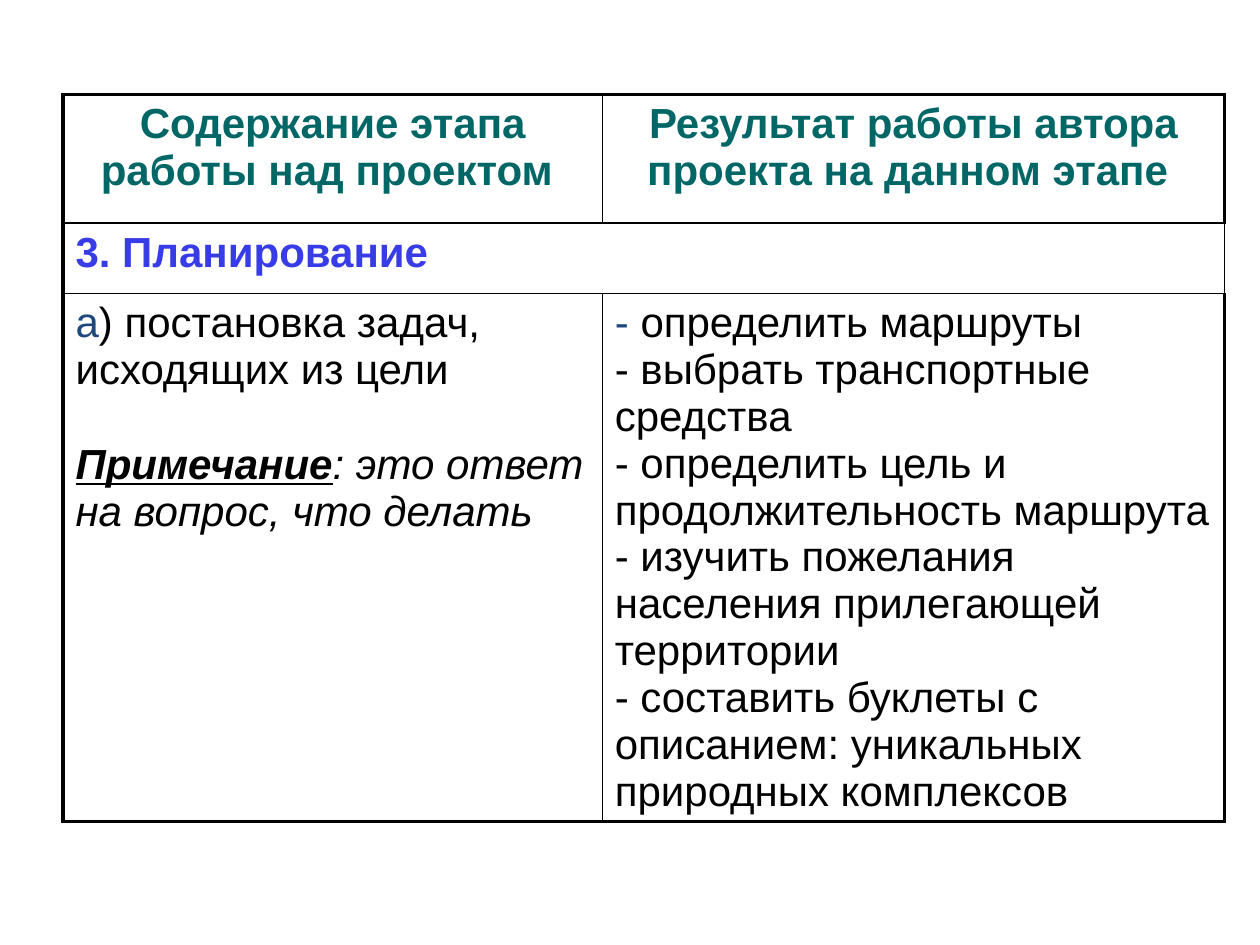
from pptx import Presentation
from pptx import util as u
from pptx.dml.color import RGBColor
from pptx.enum import text
from pptx.oxml.ns import qn
from lxml import etree

WIDTH, HEIGHT = 10, 7.5
BLACK, TEAL, VIOLET, NAVY = "000000", "006666", "383CE6", "1F497D"
THICK, THIN = 2.25, 1


def color(value):
    return RGBColor.from_string(value)


class Page:
    font, size = "Arial", 24

    def __init__(self, deck):
        self.slide = deck.slides.add_slide(deck.slide_layouts[6])

    def table(self, left, top, columns, rows):
        """Add an unstyled table; left and top are shares of the slide."""
        frame = self.slide.shapes.add_table(
            len(rows), len(columns),
            u.Inches(left * WIDTH), u.Inches(top * HEIGHT),
            u.Inches(sum(columns)), u.Inches(sum(rows)))
        grid = frame.table
        grid.first_row = grid.horz_banding = False
        for column, width in zip(grid.columns, columns):
            column.width = u.Inches(width)
        for row, height in zip(grid.rows, rows):
            row.height = u.Inches(height)
        return grid

    def borders(self, grid):
        """Thick outline, thin inner lines, no fill."""
        last_row, last_column = len(grid.rows) - 1, len(grid.columns) - 1
        for r in range(last_row + 1):
            for c in range(last_column + 1):
                cell = grid.cell(r, c)
                edges = {"lnL": c == 0, "lnR": c == last_column,
                         "lnT": r == 0, "lnB": r == last_row}
                properties = cell._tc.get_or_add_tcPr()
                for tag, outer in edges.items():
                    line = etree.SubElement(properties, qn("a:" + tag))
                    line.set("w", str(u.Pt(THICK if outer else THIN)))
                    fill = etree.SubElement(line, qn("a:solidFill"))
                    etree.SubElement(fill, qn("a:srgbClr")).set("val", BLACK)
                cell.fill.background()

    def fill_cell(self, cell, paragraphs, align=text.PP_ALIGN.LEFT, gap=0):
        """Each paragraph is a list of (words, colour, styles) spans."""
        frame = cell.text_frame
        for index, spans in enumerate(paragraphs):
            para = frame.add_paragraph() if index else frame.paragraphs[0]
            para.alignment = align
            para.space_before = u.Pt(gap if index else 0)
            for words, tint, styles in spans:
                span = para.add_run()
                span.text = words
                span.font.name, span.font.size = self.font, u.Pt(self.size)
                span.font.color.rgb = color(tint)
                span.font.bold = "b" in styles
                span.font.italic = "i" in styles
                span.font.underline = "u" in styles


def main():
    deck = Presentation()
    deck.slide_width, deck.slide_height = u.Inches(WIDTH), u.Inches(HEIGHT)
    page = Page(deck)

    # Table frame
    grid = page.table(0.05, 0.1, [4.28, 4.94], [1.02, 0.56, 4.18])
    page.borders(grid)
    grid.cell(1, 0).merge(grid.cell(1, 1))

    # Header and stage rows
    headers = ["Содержание этапа работы над проектом ",
               "Результат работы автора проекта на данном этапе "]
    for column, header in enumerate(headers):
        page.fill_cell(grid.cell(0, column), [[(header, TEAL, "b")]],
                       text.PP_ALIGN.CENTER)
    page.fill_cell(grid.cell(1, 0), [[("3. Планирование", VIOLET, "b")]])

    # Content of the stage, with a one-line gap before the note
    page.fill_cell(grid.cell(2, 0), [
        [("а", NAVY, ""), (") постановка задач, исходящих из цели", BLACK, "")],
        [("Примечание", BLACK, "biu"),
         (": это ответ на вопрос, что делать", BLACK, "i")],
    ], gap=27.6)

    # Results of the stage; only the first dash is coloured
    results = ["определить маршруты ",
               "выбрать транспортные средства",
               "определить цель и продолжительность маршрута",
               "изучить пожелания населения прилегающей территории",
               "составить буклеты с описанием: уникальных природных комплексов"]
    page.fill_cell(grid.cell(2, 1), [
        [("- ", BLACK if index else NAVY, ""), (result, BLACK, "")]
        for index, result in enumerate(results)])

    deck.save("out.pptx")


if __name__ == "__main__":
    main()
